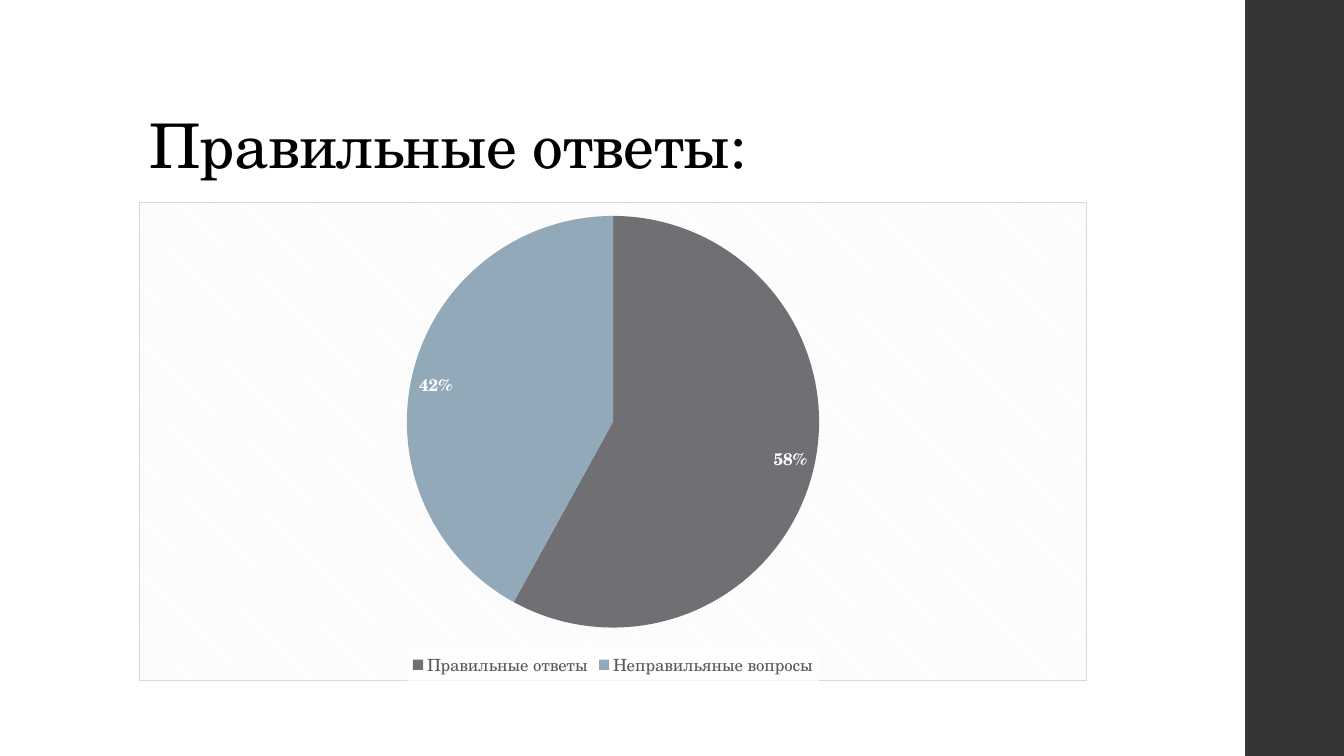
from lxml import etree
from pptx import Presentation
from pptx.chart.data import CategoryChartData
from pptx.dml.color import RGBColor
from pptx.enum.chart import XL_CHART_TYPE, XL_LABEL_POSITION, XL_LEGEND_POSITION
from pptx.enum.shapes import MSO_SHAPE
from pptx.enum.text import MSO_ANCHOR, MSO_AUTO_SIZE, PP_ALIGN
from pptx.oxml import parse_xml
from pptx.oxml.ns import nsdecls
from pptx.util import Inches, Pt

FONT = "TeX Gyre Schola"
COLORS = {
    "panel": "353537",
    "title": "000000",
    "correct": "6F6F74",
    "wrong": "92A9B9",
    "label": "FFFFFF",
    "legend": "595959",
    "stripe": "F2F2F2",
    "paper": "FFFFFF",
    "border": "D9D9D9",
}
ANSWERS = [
    ("Правильные ответы", 58, "correct"),
    ("Неправильяные вопросы", 42, "wrong"),
]


def rgb(name):
    return RGBColor.from_string(COLORS[name])


def set_font(font, size, color, bold=False):
    font.name = FONT
    font.size = Pt(size)
    font.bold = bold
    font.color.rgb = rgb(color)


def add_side_panel(s):
    sp = s.shapes.add_shape(MSO_SHAPE.RECTANGLE, Inches(12.35), 0, Inches(0.98), Inches(7.5))
    sp.shadow.inherit = False
    sp.fill.solid()
    sp.fill.fore_color.rgb = rgb("panel")
    sp.line.fill.background()


def add_title(s, text):
    sp = s.shapes.title
    sp.left, sp.top, sp.width, sp.height = map(Inches, (1.38, 0.4, 10.6, 1.45))
    tf = sp.text_frame
    tf.word_wrap = True
    tf.auto_size = MSO_AUTO_SIZE.NONE
    tf.vertical_anchor = MSO_ANCHOR.BOTTOM
    p = tf.paragraphs[0]
    p.alignment = PP_ALIGN.LEFT
    p.line_spacing = 0.9
    r = p.add_run()
    r.text = text
    set_font(r.font, 44, "title")
    r.font._element.set("spc", "-50")


def style_chart_area(chart):
    """Give the chart area its diagonal stripes and thin border."""
    area = parse_xml(
        f'<c:spPr {nsdecls("c", "a")}><a:pattFill prst="dkDnDiag">'
        f'<a:fgClr><a:srgbClr val="{COLORS["stripe"]}"/></a:fgClr>'
        f'<a:bgClr><a:srgbClr val="{COLORS["paper"]}"/></a:bgClr></a:pattFill>'
        f'<a:ln w="{Pt(0.75)}"><a:solidFill><a:srgbClr val="{COLORS["border"]}"/>'
        "</a:solidFill></a:ln></c:spPr>"
    )
    chart._chartSpace.chart.addnext(area)


def style_legend(chart):
    chart.has_legend = True
    legend = chart.legend
    legend.position = XL_LEGEND_POSITION.BOTTOM
    legend.include_in_layout = False
    set_font(legend.font, 12, "legend")
    backing = parse_xml(
        f'<c:spPr {nsdecls("c", "a")}><a:solidFill><a:srgbClr val="{COLORS["paper"]}">'
        '<a:alpha val="78000"/></a:srgbClr></a:solidFill></c:spPr>'
    )
    text = legend._element.find(etree.QName(backing.nsmap["c"], "txPr").text)
    text.addprevious(backing)


def add_pie(s):
    data = CategoryChartData()
    data.categories = [name for name, _, _ in ANSWERS]
    data.add_series("Series 1", [value for _, value, _ in ANSWERS])
    chart = s.shapes.add_chart(
        XL_CHART_TYPE.PIE, Inches(1.38), Inches(2), Inches(9.4), Inches(4.76), data
    ).chart
    chart.has_title = False
    set_font(chart.font, 10, "title")
    style_chart_area(chart)
    style_legend(chart)

    plot = chart.plots[0]
    plot.vary_by_categories = True
    for i, (_, _, color) in enumerate(ANSWERS):
        fill = plot.series[0].points[i].format.fill
        fill.solid()
        fill.fore_color.rgb = rgb(color)

    plot.has_data_labels = True
    labels = plot.data_labels
    labels.show_value = False
    labels.show_percentage = True
    labels.number_format = "0%"
    labels.number_format_is_linked = False
    labels.position = XL_LABEL_POSITION.INSIDE_END
    set_font(labels.font, 12, "label", bold=True)


def main():
    prs = Presentation()
    prs.slide_width, prs.slide_height = Inches(13.33), Inches(7.5)
    s = prs.slides.add_slide(prs.slide_layouts[5])
    add_side_panel(s)
    add_title(s, "Правильные ответы:")
    add_pie(s)
    prs.save("out.pptx")


if __name__ == "__main__":
    main()
